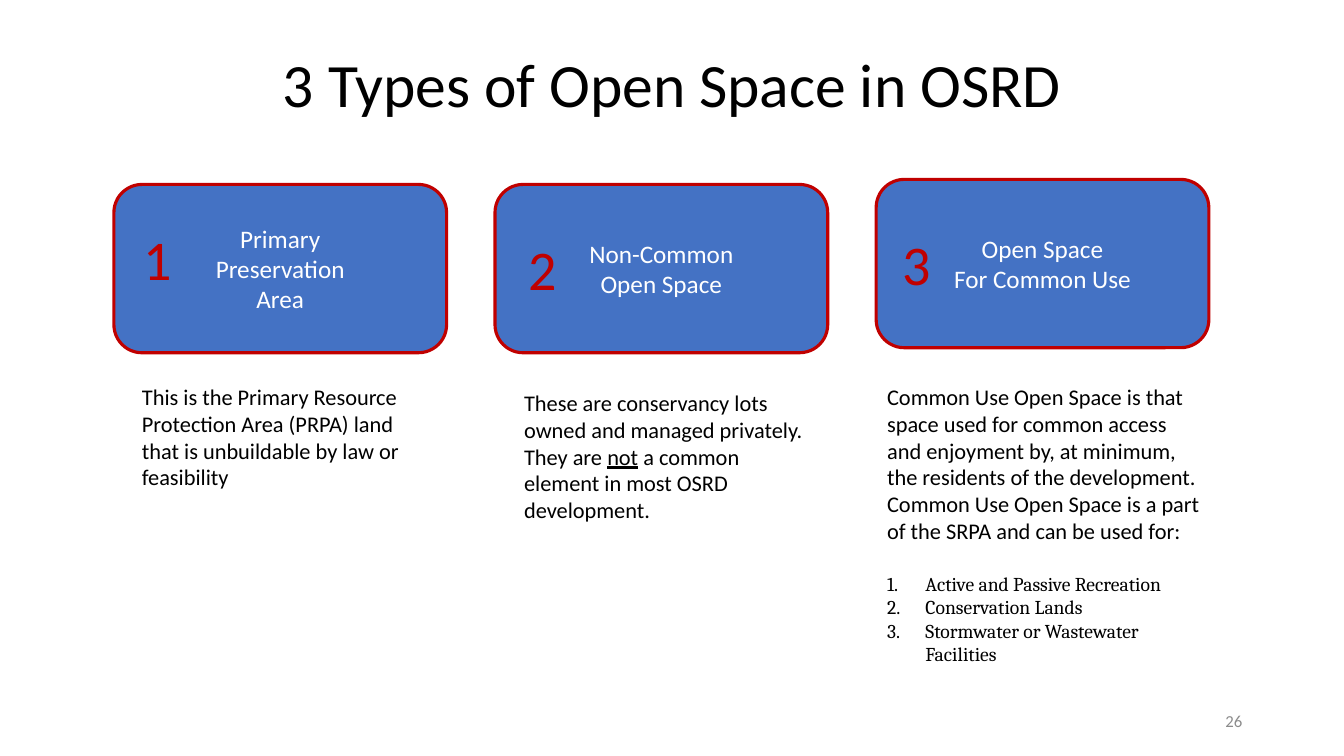
from dataclasses import dataclass

from lxml.etree import SubElement
from pptx import Presentation
from pptx.dml.color import RGBColor as Rgb
from pptx.enum.shapes import MSO_SHAPE as Preset
from pptx.enum.text import MSO_ANCHOR as Anchor, MSO_AUTO_SIZE as AutoSize, PP_ALIGN as Align
from pptx.oxml.ns import qn
from pptx.util import Emu, Pt

PX = 9144  # 100 px to the inch


@dataclass(frozen=True)
class Theme:
    black: Rgb = Rgb(0x00, 0x00, 0x00)
    white: Rgb = Rgb(0xFF, 0xFF, 0xFF)
    grey: Rgb = Rgb(0x8C, 0x8C, 0x8C)
    blue: Rgb = Rgb(0x44, 0x72, 0xC4)
    red: Rgb = Rgb(0xC0, 0x00, 0x00)
    sans: str = "Calibri"
    serif: str = "Cambria"
    title: Pt = Pt(44)
    numeral: Pt = Pt(40)
    heading: Pt = Pt(18)
    body: Pt = Pt(16)
    listing: Pt = Pt(14)
    footer: Pt = Pt(12)
    border: Pt = Pt(2.25)


THEME = Theme()
TITLE = dict(size=THEME.title, name=THEME.sans, color=THEME.black)
NUMERAL = dict(size=THEME.numeral, name=THEME.sans, color=THEME.red)
HEADING = dict(size=THEME.heading, name=THEME.sans, color=THEME.white)
BODY = dict(size=THEME.body, name=THEME.sans, color=THEME.black)
LISTING = dict(size=THEME.listing, name=THEME.serif, color=THEME.black)
FOOTER = dict(size=THEME.footer, name=THEME.sans, color=THEME.grey)

CARD_LEFT, CARD_PITCH, CARD_WIDTH, CARD_HEIGHT = 113, 378, 330, 167

# Each type: card top, heading lines, numeral box, description box, description, uses
TYPES = [
    (183, ["Primary", "Preservation", "Area"], (123, 218, 66, 77), (131, 375, 297, 118),
     [("This is the Primary Resource Protection Area (PRPA) land that is unbuildable "
       "by law or feasibility", {})], []),
    (183, ["Non-Common", "Open Space"], (505, 228, 66, 77), (510, 381, 297, 145),
     [("These are conservancy lots owned and managed privately. They are ", {}),
      ("not", dict(underline=True)),
      (" a common element in most OSRD development.", {})], []),
    (178, ["Open Space", "For Common Use"], (876, 223, 66, 77), (870, 375, 332, 293),
     [("Common Use Open Space is that space used for common access and enjoyment by, "
       "at minimum, the residents of the development. Common Use Open Space is a part "
       "of the SRPA and can be used for:", {})],
     ["Active and Passive Recreation", "Conservation Lands",
      "Stormwater or Wastewater Facilities"]),
]


def to_emu(lengths):
    return [Emu(length * PX) for length in lengths]


def set_all(target, values):
    for name, value in values.items():
        setattr(target, name, value)


def add_span(para, text, style):
    span = para.add_run()
    span.text = text
    set_all(span.font, {key: value for key, value in style.items() if key != "color"})
    span.font.color.rgb = style["color"]
    return span


def fill_frame(frame, paragraphs, style, **para_format):
    """Write paragraphs, each a list of (text, style changes), and return them."""
    for index, spans in enumerate(paragraphs):
        para = frame.paragraphs[0] if index == 0 else frame.add_paragraph()
        set_all(para, para_format)
        for text, changes in spans:
            add_span(para, text, {**style, **changes})
    return frame.paragraphs


def add_text(page, area, paragraphs, style, frame_format, **para_format):
    frame = page.shapes.add_textbox(*to_emu(area)).text_frame
    set_all(frame, {"word_wrap": True, **frame_format})
    fill_frame(frame, paragraphs, style, **para_format)
    return frame


def add_card(page, area, lines):
    card = page.shapes.add_shape(Preset.ROUNDED_RECTANGLE, *to_emu(area))
    card.shadow.inherit = False
    card.fill.solid()
    card.fill.fore_color.rgb = THEME.blue
    card.line.color.rgb = THEME.red
    card.line.width = THEME.border
    card.text_frame.vertical_anchor = Anchor.MIDDLE
    fill_frame(card.text_frame, [[(line, {})] for line in lines], HEADING,
               alignment=Align.CENTER)


def outline_text(span):
    """Give the letters a thin white edge."""
    properties = span.font._element
    edge = properties.makeelement(qn("a:ln"), {"w": str(Pt(0.75))})
    properties.insert(0, edge)
    fill = SubElement(edge, qn("a:solidFill"))
    SubElement(fill, qn("a:srgbClr"), val=str(THEME.white))


def add_numeral(page, area, number):
    frame = add_text(page, area, [[(str(number), {})]], NUMERAL,
                     dict(auto_size=AutoSize.SHAPE_TO_FIT_TEXT), alignment=Align.CENTER)
    outline_text(frame.paragraphs[0].runs[0])


def add_numbered_list(frame, items):
    for index, item in enumerate(items):
        para = frame.add_paragraph()
        if index == 0:
            para.space_before = Pt(19.5)
        add_span(para, item, LISTING)
        properties = para._p.get_or_add_pPr()
        indent = 38 * PX
        properties.set("marL", str(indent))
        properties.set("indent", str(-indent))
        SubElement(properties, qn("a:buFont"), typeface=THEME.serif)
        SubElement(properties, qn("a:buAutoNum"), type="arabicPeriod")


def main():
    deck = Presentation()
    deck.slide_width, deck.slide_height = to_emu((1333, 750))
    page = deck.slides.add_slide(deck.slide_layouts[6])

    middle = dict(vertical_anchor=Anchor.MIDDLE)
    add_text(page, (92, 40, 1150, 94), [[("3 Types of Open Space in OSRD", {})]], TITLE,
             middle, alignment=Align.CENTER, line_spacing=0.9)
    add_text(page, (942, 695, 300, 40), [[("26", {})]], FOOTER, middle,
             alignment=Align.RIGHT)

    for index, (top, heading, numeral_area, area, description, uses) in enumerate(TYPES):
        left = CARD_LEFT + index * CARD_PITCH
        add_card(page, (left, top, CARD_WIDTH, CARD_HEIGHT), heading)
        add_numeral(page, numeral_area, index + 1)
        frame = add_text(page, area, [description], BODY,
                         dict(auto_size=AutoSize.SHAPE_TO_FIT_TEXT))
        add_numbered_list(frame, uses)

    deck.save("out.pptx")


if __name__ == "__main__":
    main()
